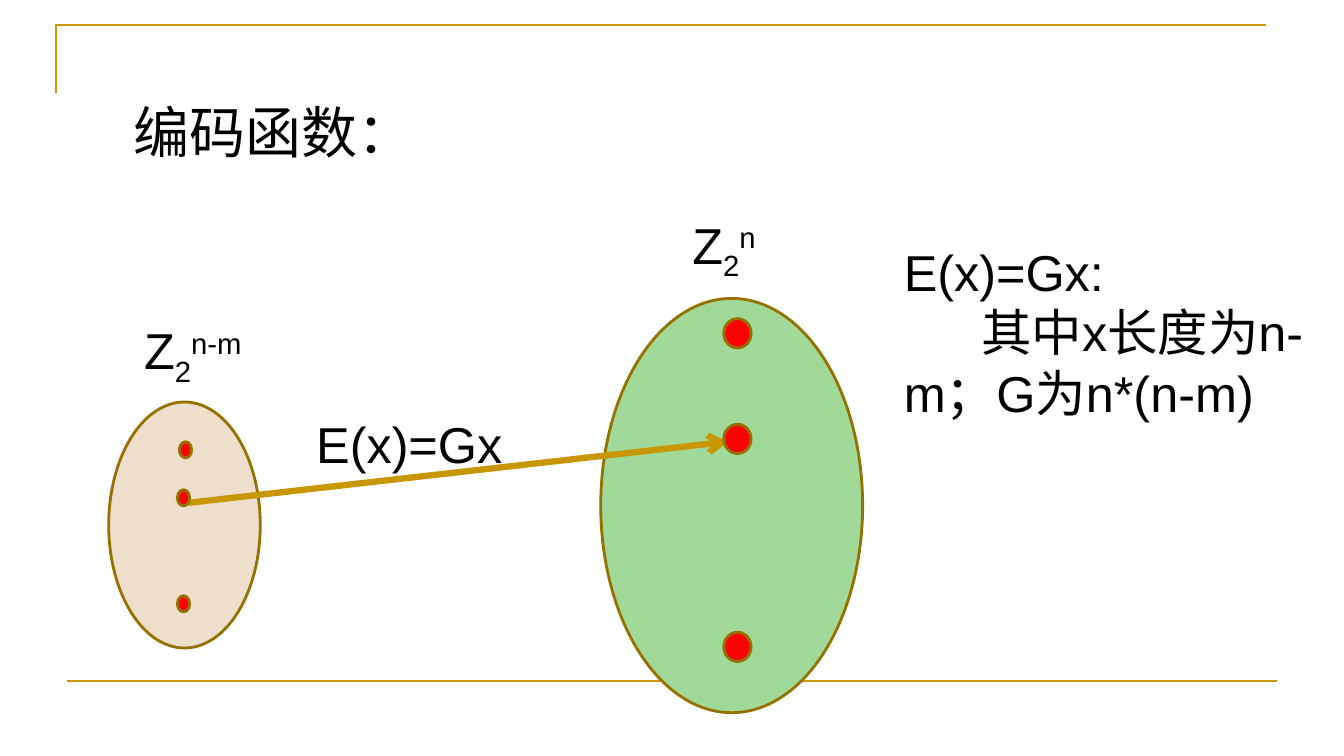
from pptx import Presentation
from pptx.dml.color import RGBColor
from pptx.enum.shapes import MSO_CONNECTOR as Connector, MSO_SHAPE as Shape
from pptx.enum.text import MSO_ANCHOR as Anchor, MSO_AUTO_SIZE as AutoSize, PP_ALIGN as Align
from pptx.oxml.ns import qn
from pptx.util import Cm, Pt
from lxml.etree import SubElement

BLACK = RGBColor(0x00, 0x00, 0x00)
GOLD = RGBColor(0xCC, 0x99, 0x00)
ARROW = RGBColor(0xC8, 0x96, 0x00)
OUTLINE = RGBColor(0x97, 0x71, 0x00)
SAND = RGBColor(0xEE, 0xDF, 0xCC)
GREEN = RGBColor(0xA1, 0xDA, 0x98)
RED = RGBColor(0xFF, 0x00, 0x00)

TITLE = "编码函数："
TITLE_AREA = (3.12, 2.34, 7.65, 1.96)
SUB, SUPER = -25000, 30000
LABELS = [
    ((3.38, 7.92, 3.25, 1.8), False, [[("Z", 0), ("2", SUB), ("n-m", SUPER)]]),
    ((17.2, 5.26, 2.26, 1.8), False, [[("Z", 0), ("2", SUB), ("n", SUPER)]]),
    ((22.53, 5.94, 10.8, 4.88), True,
     [[("E(x)=Gx:", 0)], [("其中x长度为n-m；G为n*(n-m)", 0)]]),
    ((7.72, 10.29, 5.26, 1.8), False, [[("E(x)=Gx", 0)]]),
]
SETS = [((2.74, 10.13, 3.82, 6.2), SAND), ((15.14, 7.52, 6.6, 10.44), GREEN)]
SMALL_DOT, LARGE_DOT = (0.31, 0.41), (0.69, 0.74)
DOTS = [
    (SMALL_DOT, [(4.52, 11.13), (4.47, 12.34), (4.47, 15.01)]),
    (LARGE_DOT, [(18.24, 8.03), (18.24, 10.69), (18.24, 15.93)]),
]
FRAME_CORNER = [(1.42, 2.34), (1.42, 0.64), (31.9, 0.64)]
BASELINE_RULE = (1.7, 17.15, 32.18, 17.15)
MAPPING = (4.75, 12.67, 18.34, 11.13)
INDENT = Cm(1.95)


def apply(target, values):
    for name, value in values.items():
        setattr(target, name, value)


def lengths(values):
    return [Cm(value) for value in values]


def add_ellipse(slide, area, color):
    oval = slide.shapes.add_shape(Shape.OVAL, *lengths(area))
    oval.shadow.inherit = False
    oval.fill.solid()
    oval.fill.fore_color.rgb = color
    oval.line.color.rgb = OUTLINE
    oval.line.width = Pt(2)


def add_line(slide, ends, color, width):
    line = slide.shapes.add_connector(Connector.STRAIGHT, *lengths(ends))
    line.line.color.rgb = color
    line.line.width = Pt(width)
    SubElement(line._element.spPr, qn("a:effectLst"))
    return line


def write(para, pieces, size):
    para.alignment = Align.LEFT
    for text, shift in pieces:
        span = para.add_run()
        span.text = text
        apply(span.font, {"name": "Arial", "size": Pt(size)})
        span.font.color.rgb = BLACK
        if shift:
            span.font._element.set("baseline", str(shift))


def add_label(slide, area, wrap, lines):
    frame = slide.shapes.add_textbox(*lengths(area)).text_frame
    apply(frame, {"word_wrap": wrap, "auto_size": AutoSize.SHAPE_TO_FIT_TEXT})
    for number, pieces in enumerate(lines):
        para = frame.add_paragraph() if number else frame.paragraphs[0]
        write(para, pieces, 36)
        if number:
            para._p.get_or_add_pPr().set("indent", str(INDENT))


def add_frame(slide):
    points = [tuple(lengths(point)) for point in FRAME_CORNER]
    builder = slide.shapes.build_freeform(*points[0])
    builder.add_line_segments(points[1:], close=False)
    corner = builder.convert_to_shape()
    corner.shadow.inherit = False
    corner.fill.background()
    corner.line.color.rgb = GOLD
    corner.line.width = Pt(1.5)
    add_line(slide, BASELINE_RULE, GOLD, 1.5)


def add_title(slide):
    title = slide.shapes.title
    apply(title, dict(zip(("left", "top", "width", "height"), lengths(TITLE_AREA))))
    apply(title.text_frame, {"word_wrap": False, "auto_size": AutoSize.NONE,
                             "vertical_anchor": Anchor.TOP})
    write(title.text_frame.paragraphs[0], [(TITLE, 0)], 40)


def main():
    deck = Presentation()
    apply(deck, {"slide_width": Cm(33.87), "slide_height": Cm(19.05)})
    page = deck.slides.add_slide(deck.slide_layouts[5])
    add_title(page)
    add_frame(page)
    for area, color in SETS:
        add_ellipse(page, area, color)
    arrow = add_line(page, MAPPING, ARROW, 4.5)
    SubElement(arrow.line._get_or_add_ln(), qn("a:tailEnd"), type="arrow")
    for size, places in DOTS:
        for place in places:
            add_ellipse(page, place + size, RED)
    for area, wrap, lines in LABELS:
        add_label(page, area, wrap, lines)
    deck.save("out.pptx")


if __name__ == "__main__":
    main()
